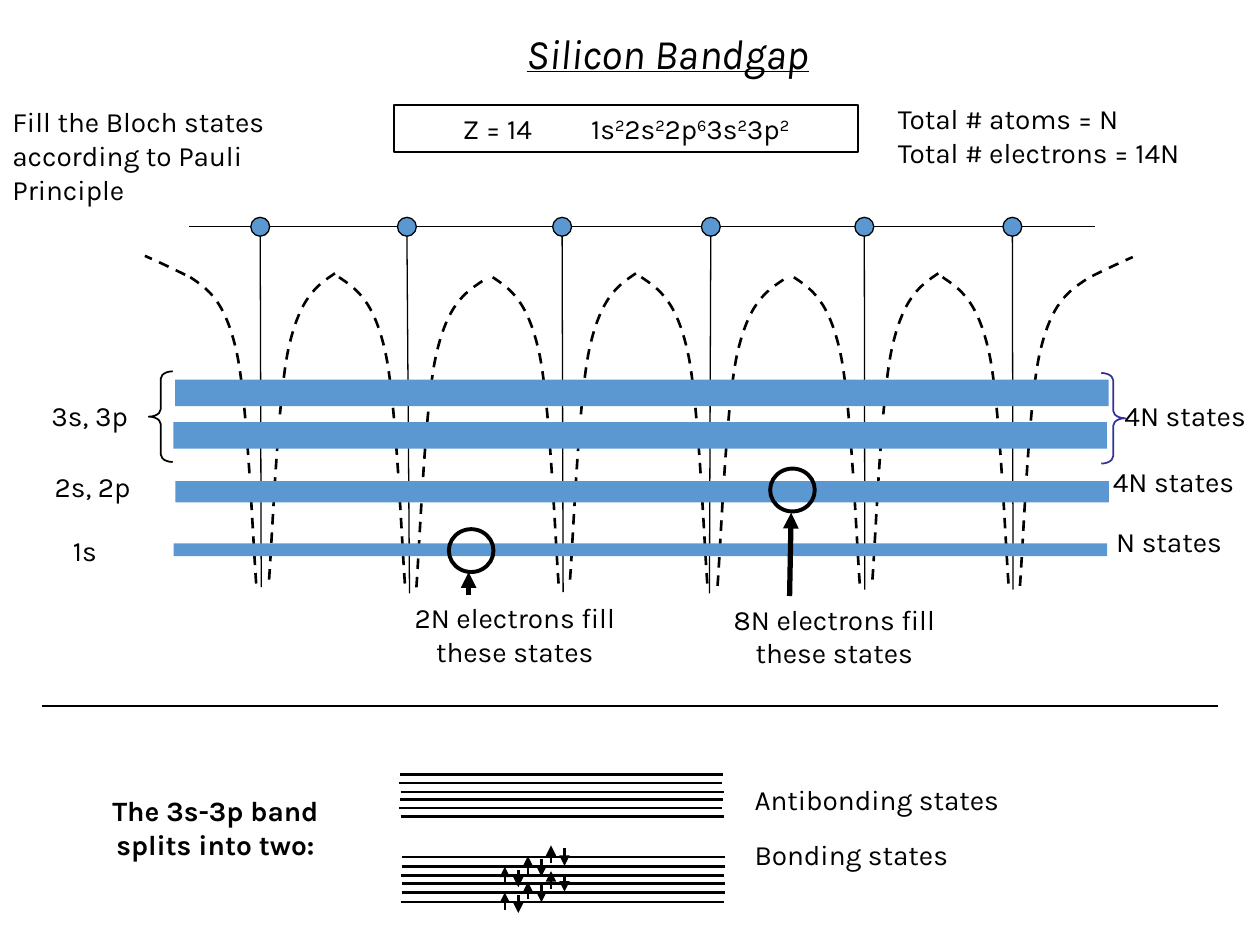
"""Build the silicon bandgap slide: Bloch bands over a row of atoms, and the 3s-3p split."""
import copy

import lxml.etree
import pptx
import pptx.dml.color
import pptx.enum.dml
import pptx.enum.shapes
import pptx.enum.text
import pptx.oxml.ns
import pptx.util

Pt = pptx.util.Pt
RGBColor = pptx.dml.color.RGBColor
MSO_SHAPE = pptx.enum.shapes.MSO_SHAPE
PP_ALIGN = pptx.enum.text.PP_ALIGN
qn = pptx.oxml.ns.qn

BLACK = RGBColor(0x00, 0x00, 0x00)
BLUE = RGBColor(0x5B, 0x98, 0xD2)
INDIGO = RGBColor(0x33, 0x33, 0x99)

BODY = {"name": "Karla", "size": Pt(16)}
BOLD = {**BODY, "bold": True}
TITLE = {"name": "Karla", "size": Pt(24), "italic": True, "underline": True}
LEFT, CENTER = PP_ALIGN.LEFT, PP_ALIGN.CENTER

LABELS = [
    (["Silicon Bandgap"], (293.8, 12, 185, 36.7), TITLE, LEFT, {"word_wrap": False}),
    (["Fill the Bloch states according to Pauli Principle"], (0, 56.4, 208, 72), BODY, LEFT, {}),
    (["Total # atoms = N\vTotal # electrons = 14N"], (506, 54.7, 208, 50.4), BODY, LEFT, {}),
    (["3s, 3p"], (22.3, 224.4, 65.5, 28.8), BODY, LEFT, {}),
    (["2s, 2p"], (24.2, 265, 81.4, 28.8), BODY, LEFT, {}),
    (["1s"], (34.6, 301.4, 54.7, 28.8), BODY, LEFT, {}),
    (["4N states"], (635.5, 224.4, 89.3, 28.8), BODY, LEFT, {}),
    (["4N states"], (628.8, 262.1, 91.4, 26.6), BODY, LEFT, {}),
    (["N states"], (630.7, 296.2, 89.3, 28.8), BODY, LEFT, {}),
    (["2N electrons fill these states"], (218.9, 339.8, 150.5, 50.4), BODY, CENTER, {}),
    (["8N electrons fill these states"], (401.5, 340.6, 150.5, 50.4), BODY, CENTER, {}),
    (["The 3s-3p band\vsplits into two:"], (48.2, 450, 149.8, 50.4), BOLD, CENTER, {}),
    (["Antibonding states", "Bonding states"], (424.1, 439.9, 180, 69.8), BODY, LEFT, {}),
]
CONFIGURATION = [("Z = 14\t1s", "2"), ("2s", "2"), ("2p", "6"), ("3s", "2"), ("3p", "2")]

# atom x, falling curve x, rising curve x, rising curve y, stem foot x, stem foot y
ATOMS = [
    (148.7, 108.7, 153.4, 156.2, 149.3, 335.5),
    (232.5, 193.7, 237.6, 160.6, 234.0, 339.1),
    (321.2, 281.5, 325.4, 156.2, 321.8, 338.4),
    (406.2, 366.5, 409.7, 159.8, 405.4, 339.1),
    (493.9, 453.6, 498.2, 156.2, 494.2, 337.0),
    (578.5, 538.6, 582.5, 159.8, 578.9, 337.0),
]
ATOM_Y, ATOM_SIZE, FALL_TOP, WELL_WIDTH = 129.6, 10.8, 158.4, 38
WELL = [(0, 0), (10, 6.7), (20, 13.3), (26.6, 43.2), (33, 73), (36, 156.5), (38, 179.3)]
OUTER_ENDS = [[(105.8, 157), (105.8, 157), (94.3, 151.2), (82.8, 146.2)],
              [(624.2, 157.7), (624.2, 157.7), (635.8, 151.9), (647.3, 146.9)]]
BANDS = [(100, 217, 15.2), (99, 241.2, 15.2), (100.2, 275, 12.2), (99.2, 310.6, 7.2)]
BAND_WIDTH = 533.5
BRACES = [(MSO_SHAPE.LEFT_BRACE, 85, 212.2, BLACK), (MSO_SHAPE.RIGHT_BRACE, 629.3, 213.1, INDIGO)]
FILLED = [((256.5, 302.4), (267.8, 339.8), (267.8, 326.9)),
          ((440.1, 267.8), (451.2, 340.6), (452.1, 293))]

# tops of the two triplets, then left and drop of each level in a triplet
LEVEL_GROUPS = [([442.7, 456.9], [(228.5, 0), (228.2, 4.8), (229, 9.8)]),
                ([489.7, 504.8], [(229.5, 0), (229.5, 5.3), (229, 10.6)])]
LEVEL_WIDTH = 184.5
SPIN_ROWS = [505.4, 520.1]


def set_all(target, values):
    for key, value in values.items():
        setattr(target, key, value)


def style_line(line, color, width):
    line.color.rgb = color
    line.width = Pt(width)


def draw_line(slide, start, end, width, arrow=False):
    ends = [Pt(value) for value in (*start, *end)]
    stroke = slide.shapes.add_connector(pptx.enum.shapes.MSO_CONNECTOR.STRAIGHT, *ends)
    style_line(stroke.line, BLACK, width)
    properties = stroke._element.spPr
    if arrow:
        lxml.etree.SubElement(properties.find(qn("a:ln")), qn("a:tailEnd"), type="triangle")
    lxml.etree.SubElement(properties, qn("a:effectLst"))


def draw_shape(slide, kind, box, fill=None, line=None, width=1):
    shape = slide.shapes.add_shape(kind, *map(Pt, box))
    shape.shadow.inherit = False
    if fill is None:
        shape.fill.background()
    else:
        shape.fill.solid()
        shape.fill.fore_color.rgb = fill
    if line is None:
        shape.line.fill.background()
    else:
        style_line(shape.line, line, width)
    return shape


def draw_dashed(slide, points):
    first, *rest = [(Pt(x), Pt(y)) for x, y in points]
    builder = slide.shapes.build_freeform(*first)
    builder.add_line_segments(rest, close=False)
    curve = builder.convert_to_shape()
    outline = next(curve._element.iter(qn("a:path")))
    segments = outline.findall(qn("a:lnTo"))
    for start in range(0, len(segments), 3):
        bend = lxml.etree.SubElement(outline, qn("a:cubicBezTo"))
        for segment in segments[start:start + 3]:
            bend.append(segment[0])
            outline.remove(segment)
    curve.shadow.inherit = False
    curve.fill.background()
    style_line(curve.line, BLACK, 1.5)
    curve.line.dash_style = pptx.enum.dml.MSO_LINE.DASH


def format_run(run, font):
    set_all(run.font, font)
    run.font.color.rgb = BLACK


def add_label(slide, paragraphs, box, font, align, frame_format):
    frame = slide.shapes.add_textbox(*map(Pt, box)).text_frame
    set_all(frame, {"word_wrap": True, **frame_format})
    for index, wording in enumerate(paragraphs):
        paragraph = frame.add_paragraph() if index else frame.paragraphs[0]
        paragraph.text = wording
        paragraph.alignment = align
        if len(paragraphs) > 1:
            paragraph.line_spacing = 1.2
        if index:
            paragraph.space_before = Pt(8.5)
        for run in paragraph.runs:
            format_run(run, font)
        for line_break in paragraph._p.findall(qn("a:br")):
            line_break.insert(0, copy.deepcopy(paragraph.runs[0]._r.rPr))


def add_configuration(slide):
    shape = draw_shape(slide, MSO_SHAPE.RECTANGLE, (225.2, 60.2, 265, 26.6), line=BLACK)
    frame = shape.text_frame
    set_all(frame, {"margin_left": Pt(39.2), "margin_right": 0, "word_wrap": True,
                    "vertical_anchor": pptx.enum.text.MSO_ANCHOR.MIDDLE})
    paragraph = frame.paragraphs[0]
    paragraph.alignment = LEFT
    stops = lxml.etree.SubElement(paragraph._p.get_or_add_pPr(), qn("a:tabLst"))
    lxml.etree.SubElement(stops, qn("a:tab"), pos=str(Pt(73.4)), algn="l")
    for shell, count in CONFIGURATION:
        for wording, baseline in ((shell, "0"), (count, "30000")):
            run = paragraph.add_run()
            run.text = wording
            format_run(run, BODY)
            run._r.rPr.set("baseline", baseline)


def draw_split_levels(slide):
    for tops, levels in LEVEL_GROUPS:
        for top in tops:
            for left, drop in levels:
                y = top + drop
                draw_line(slide, (left, y), (left + LEVEL_WIDTH, y), 1.5)
    for foot in SPIN_ROWS:
        for pair in range(3):
            x, y = 288.5 + 13.2 * pair, foot - 6.1 * pair
            draw_line(slide, (x, y), (x, y - 10.1), 1.5, arrow=True)
            draw_line(slide, (x + 7.7, y - 8.5), (x + 7.7, y + 1.6), 1.5, arrow=True)


def draw_crystal(slide):
    for index, (x, fall_x, rise_x, rise_y, foot_x, foot_y) in enumerate(ATOMS):
        draw_dashed(slide, [(fall_x + dx, FALL_TOP + dy) for dx, dy in WELL])
        draw_dashed(slide, [(rise_x + WELL_WIDTH - dx, rise_y + dy) for dx, dy in WELL])
        start = 108 + 172.3 * (index // 2) + 85 * (index % 2)
        draw_line(slide, (start, ATOM_Y), (start + 88, ATOM_Y), 0.75)
        draw_line(slide, (x, ATOM_Y), (foot_x, foot_y), 0.75)
    for points in OUTER_ENDS:
        draw_dashed(slide, points)
    for left, top, height in BANDS:
        draw_shape(slide, MSO_SHAPE.RECTANGLE, (left, top, BAND_WIDTH, height), fill=BLUE)
    for x, *_ in ATOMS:
        corner = (x - ATOM_SIZE / 2, ATOM_Y - ATOM_SIZE / 2)
        draw_shape(slide, MSO_SHAPE.OVAL, (*corner, ATOM_SIZE, ATOM_SIZE), BLUE, BLACK, 0.75)
    for kind, left, top, color in BRACES:
        draw_shape(slide, kind, (left, top, 13.7, 51.8), line=color).adjustments[0] = 0.31
    for corner, start, end in FILLED:
        draw_shape(slide, MSO_SHAPE.OVAL, (*corner, 25.5, 24.5), line=BLACK, width=2.25)
        draw_line(slide, start, end, 3, arrow=True)


deck = pptx.Presentation()
set_all(deck, {"slide_width": Pt(720), "slide_height": Pt(540)})
bandgap = deck.slides.add_slide(deck.slide_layouts[6])
draw_split_levels(bandgap)
draw_crystal(bandgap)
draw_line(bandgap, (24, 403.4), (696, 403.4), 0.75)
add_configuration(bandgap)
for label in LABELS:
    add_label(bandgap, *label)
deck.save("out.pptx")
